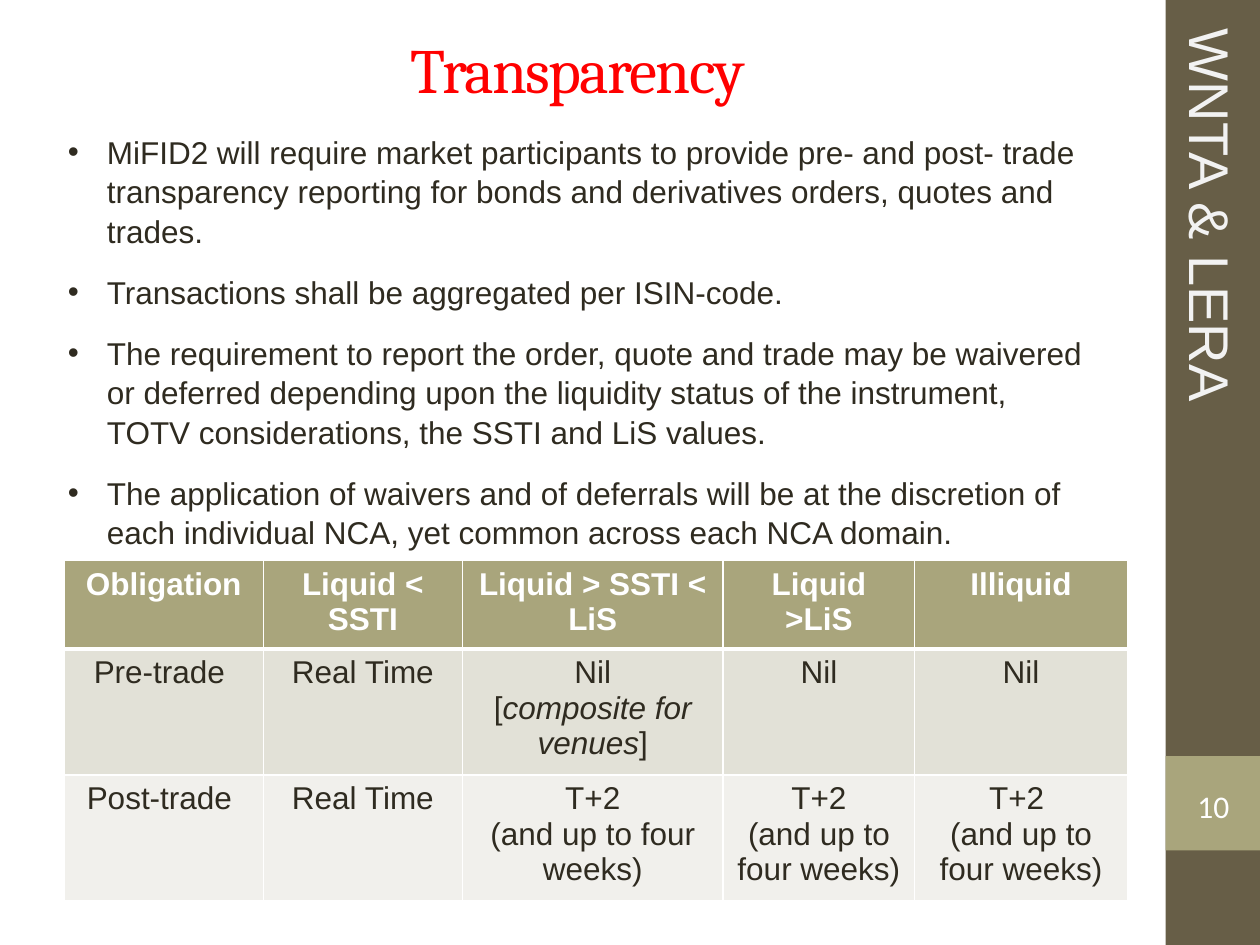
"""Build the Transparency slide with its side bar, bullets and obligation table."""
from lxml import etree
from pptx import Presentation
from pptx.dml.color import RGBColor
from pptx.enum.shapes import MSO_SHAPE
from pptx.enum.text import MSO_ANCHOR, PP_ALIGN
from pptx.oxml.ns import qn
from pptx.util import Inches, Pt

RECT, PAIR = MSO_SHAPE.RECTANGLE, MSO_SHAPE.DOUBLE_BRACKET
MID, TOP = MSO_ANCHOR.MIDDLE, MSO_ANCHOR.TOP
CENTER, LEFT = PP_ALIGN.CENTER, PP_ALIGN.LEFT

WHITE = RGBColor(0xFF, 0xFF, 0xFF)
PALE = RGBColor(0xF2, 0xF2, 0xF2)
RED = RGBColor(0xFF, 0x00, 0x00)
INK = RGBColor(0x2F, 0x2B, 0x20)
BROWN = RGBColor(0x67, 0x5E, 0x47)
OLIVE = RGBColor(0xA9, 0xA5, 0x7C)
SAND = RGBColor(0xE2, 0xE1, 0xD7)
CREAM = RGBColor(0xF1, 0xF0, 0xEC)

HEAD = {"name": "Cambria", "size": Pt(36), "color": RED}
SIDE = {"name": "Arial", "size": Pt(32), "color": PALE}
BODY = {"name": "Arial", "size": Pt(18), "color": INK}
LABEL = {**BODY, "color": WHITE, "bold": True}
PAGE = {"name": "Calibri", "size": Pt(18), "color": WHITE}

POINTS = [
    "MiFID2 will require market participants to provide pre- and post- trade "
    "transparency reporting for bonds and derivatives orders, quotes and trades.",
    "Transactions shall be aggregated per ISIN-code.",
    "The requirement to report the order, quote and trade may be waivered or "
    "deferred depending upon the liquidity status of the instrument, TOTV "
    "considerations, the SSTI and LiS values.",
    "The application of waivers and of deferrals will be at the discretion of "
    "each individual NCA, yet common across each NCA domain.",
]
LATE = "T+2\n(and up to four weeks)"
ROWS = [
    ["Obligation", "Liquid < SSTI", "Liquid > SSTI < LiS", "Liquid >LiS", "Illiquid"],
    ["Pre-trade ", "Real Time", "Nil\n[_composite for venues_]", "Nil", "Nil"],
    ["Post-trade ", "Real Time", LATE, LATE, LATE.replace("T+2", "T+2 ")],
]
STYLES = [(OLIVE, LABEL), (SAND, BODY), (CREAM, BODY)]
RULES = [1, 3, 1, 1]
WIDTHS = [1.58, 1.58, 2.07, 1.52, 1.69]
HEIGHTS = [0.7, 1, 1]


def style(run, look):
    """Apply a dict of font values to a run."""
    for key, value in look.items():
        if key == "color":
            run.font.color.rgb = value
        else:
            setattr(run.font, key, value)


def write(frame, lines, look, align=LEFT):
    """Fill a frame with paragraphs, where underscores enclose italics."""
    frame.word_wrap = True
    for row, line in enumerate(lines):
        para = frame.paragraphs[0] if row == 0 else frame.add_paragraph()
        para.alignment = align
        for part, text in enumerate(line.split("_")):
            run = para.add_run()
            run.text = text
            style(run, {**look, "italic": part % 2 == 1})


def add_box(slide, place, lines, look, align=LEFT, anchor=TOP):
    """Add a text box and return it."""
    box = slide.shapes.add_textbox(*map(Inches, place))
    box.text_frame.vertical_anchor = anchor
    write(box.text_frame, lines, look, align)
    return box


def add_block(slide, kind, place, color=None):
    """Add a shape without outline, filled if a colour is given."""
    shape = slide.shapes.add_shape(kind, *map(Inches, place))
    shape.shadow.inherit = False
    shape.line.fill.background()
    if color is None:
        shape.fill.background()
    else:
        shape.fill.solid()
        shape.fill.fore_color.rgb = color
    return shape


def add_page(slide, place, text):
    """Add the slide number."""
    frame = add_block(slide, PAIR, place).text_frame
    for side in ("left", "right", "top", "bottom"):
        setattr(frame, f"margin_{side}", 0)
    frame.vertical_anchor = MID
    write(frame, [text], PAGE, CENTER)


def add_list(slide, place, lines):
    """Add a bulleted list with hanging indents."""
    box = add_box(slide, place, lines, BODY)
    for para in box.text_frame.paragraphs:
        para.space_after = Pt(12)
        para.line_spacing = 1.05
        props = para._p.get_or_add_pPr()
        props.set("marL", str(Inches(0.31)))
        props.set("indent", str(-Inches(0.31)))
        etree.SubElement(props, qn("a:buFont"), typeface="Arial")
        etree.SubElement(props, qn("a:buChar"), char="•")


def edge(cell, above, below):
    """Draw white cell borders, with own widths above and below."""
    props = cell._tc.get_or_add_tcPr()
    for spot, (side, width) in enumerate(zip("LRTB", (1, 1, above, below))):
        line = etree.Element(qn(f"a:ln{side}"), w=str(Pt(width)))
        fill = etree.SubElement(line, qn("a:solidFill"))
        etree.SubElement(fill, qn("a:srgbClr"), val=str(WHITE))
        props.insert(spot, line)


def add_grid(slide, left, top):
    """Add the obligation table."""
    place = (left, top, sum(WIDTHS), sum(HEIGHTS))
    table = slide.shapes.add_table(len(ROWS), len(WIDTHS), *map(Inches, place)).table
    for col, width in zip(table.columns, WIDTHS):
        col.width = Inches(width)
    for row, (texts, (color, look)) in enumerate(zip(ROWS, STYLES)):
        table.rows[row].height = Inches(HEIGHTS[row])
        for col, text in enumerate(texts):
            cell = table.cell(row, col)
            cell.fill.solid()
            cell.fill.fore_color.rgb = color
            edge(cell, RULES[row], RULES[row + 1])
            write(cell.text_frame, text.split("\n"), look, CENTER)


def main():
    """Compose and save the slide."""
    deck = Presentation()
    deck.slide_width, deck.slide_height = Inches(10), Inches(7.5)
    slide = deck.slides.add_slide(deck.slide_layouts[6])
    add_block(slide, RECT, (9.25, 0, 0.75, 7.5), BROWN)
    add_block(slide, RECT, (9.25, 6, 0.75, 0.75), OLIVE)
    title = add_box(slide, (0, 0.09, 9.17, 0.9), ["Transparency"], HEAD, CENTER, MID)
    title.text_frame.paragraphs[0].runs[0]._r.get_or_add_rPr().set("spc", "-100")
    add_page(slide, (9.33, 6.18, 0.6, 0.43), "10")
    side = add_box(slide, (7.93, 1.49, 3.36, 0.64), ["WNTA & LERA"], SIDE)
    side.rotation = 90
    add_list(slide, (0.44, 0.99, 8.35, 3.33), POINTS)
    add_grid(slide, 0.51, 4.45)
    deck.save("out.pptx")


if __name__ == "__main__":
    main()
